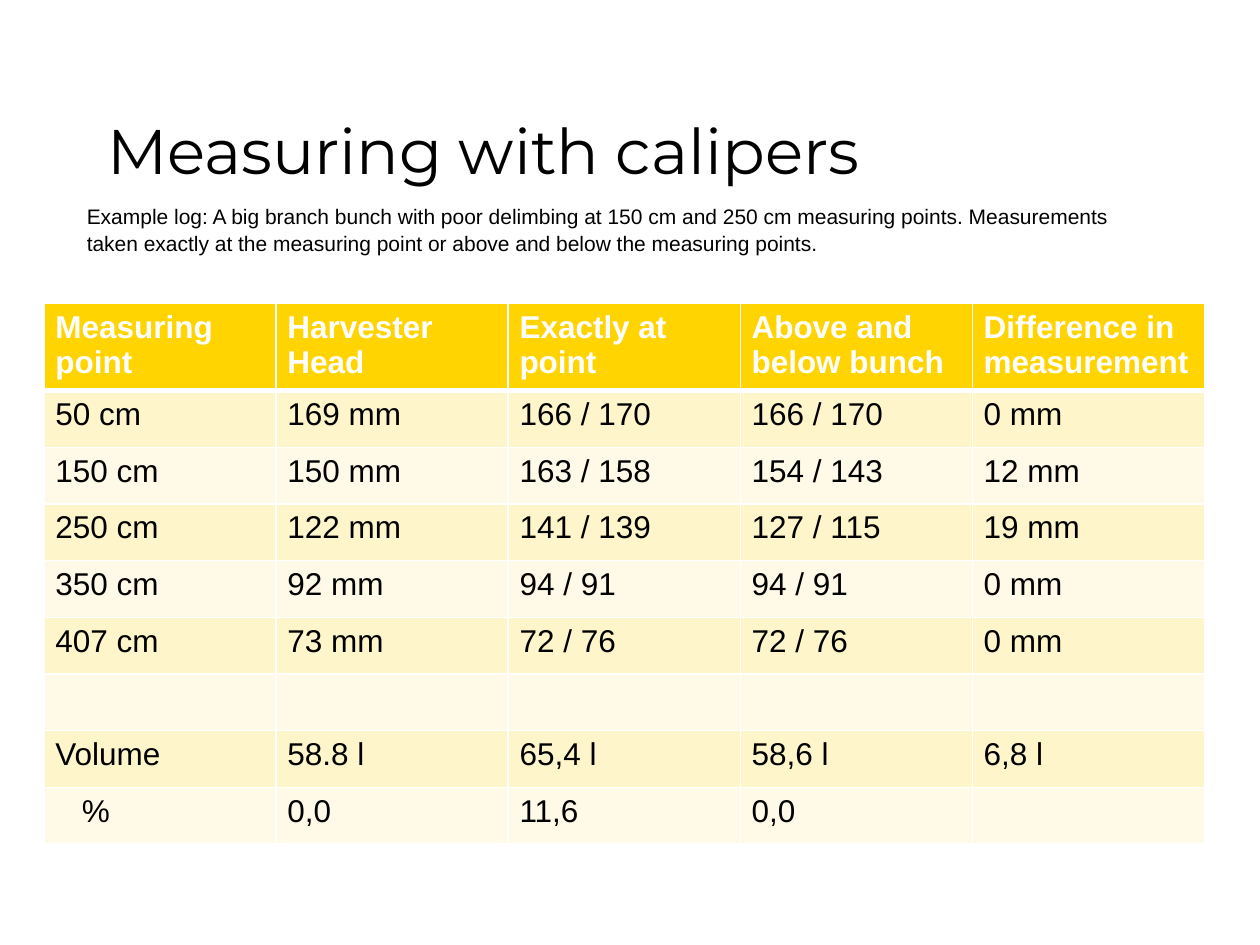
import pptx
import pptx.util
import pptx.dml.color
import pptx.enum.text
import pptx.oxml
import pptx.oxml.ns
from dataclasses import dataclass

Inches = pptx.util.Inches
Pt = pptx.util.Pt
RGB = pptx.dml.color.RGBColor.from_string


@dataclass
class Theme:
    white: str = "FFFFFF"
    black: str = "000000"
    gold: str = "FFD400"
    dark: str = "FFF5CB"
    light: str = "FFFAE7"
    big: int = 36
    mid: int = 18
    small: int = 12
    sans: str = "Arial"
    head: str = "Montserrat"


def style(para, color, **form):
    for key, value in form.items():
        setattr(para.font, key, value)
    para.font.color.rgb = RGB(color)


def border(cell, widths, color):
    props = cell._tc.get_or_add_tcPr()
    for spot, (side, width) in enumerate(widths.items()):
        line = pptx.oxml.parse_xml(
            f'<a:{side} {pptx.oxml.ns.nsdecls("a")} w="{Pt(width)}">'
            f'<a:solidFill><a:srgbClr val="{color}"/></a:solidFill></a:{side}>'
        )
        props.insert(spot, line)


theme = Theme()
deck = pptx.Presentation()
deck.slide_width, deck.slide_height = Inches(10), Inches(7.5)
slide = deck.slides.add_slide(deck.slide_layouts[5])

title = slide.shapes.title
place = {"left": 0.75, "top": 0.58, "width": 8.5, "height": 1.44}
for key, value in place.items():
    setattr(title, key, Inches(value))
frame = title.text_frame
frame.text = "Measuring with calipers"
form = {
    "auto_size": pptx.enum.text.MSO_AUTO_SIZE.NONE,
    "vertical_anchor": pptx.enum.text.MSO_ANCHOR.MIDDLE,
    "margin_bottom": Inches(0.28),
}
for key, value in form.items():
    setattr(frame, key, value)
para = frame.paragraphs[0]
para.alignment = pptx.enum.text.PP_ALIGN.LEFT
style(para, theme.black, size=Pt(theme.big), name=theme.head)

rows = [
    ["Measuring point", "Harvester\nHead", "Exactly at point",
     "Above and below bunch", "Difference in measurement"],
    ["50 cm", "169 mm", "166 / 170", "166 / 170", "0 mm"],
    ["150 cm", "150 mm", "163 / 158", "154 / 143", "12 mm"],
    ["250 cm", "122 mm", "141 / 139", "127 / 115", "19 mm"],
    ["350 cm", "92 mm", "94 / 91", "94 / 91", "0 mm"],
    ["407 cm", "73 mm", "72 / 76", "72 / 76", "0 mm"],
    [""] * 5,
    ["Volume", "58.8 l", "65,4 l", "58,6 l", "6,8 l"],
    ["%", "0,0", "11,6", "0,0", ""],
]
table = slide.shapes.add_table(
    len(rows), len(rows[0]), Inches(0.35), Inches(2.41), Inches(9.21), Inches(4.32)
).table
for r, row in enumerate(rows):
    top = r == 0
    table.rows[r].height = Inches(0.69 if top else 0.45)
    fill = theme.gold if top else theme.dark if r % 2 else theme.light
    ink = theme.white if top else theme.black
    widths = {"lnL": 1, "lnR": 1, "lnT": 3 if r == 1 else 1, "lnB": 3 if top else 1}
    for c, text in enumerate(row):
        cell = table.cell(r, c)
        cell.text = text
        cell.margin_left = cell.margin_right = Inches(0.09)
        cell.fill.solid()
        cell.fill.fore_color.rgb = RGB(fill)
        border(cell, widths, theme.white)
        for para in cell.text_frame.paragraphs:
            style(para, ink, size=Pt(theme.mid), name=theme.sans, bold=top)
table.cell(len(rows) - 1, 0).margin_left = Inches(0.3)

note = slide.shapes.add_textbox(Inches(0.59), Inches(1.55), Inches(8.58), Inches(0.79))
note.text_frame.word_wrap = True
para = note.text_frame.paragraphs[0]
para.text = (
    "Example log: A big branch bunch with poor delimbing at 150 cm and 250 cm "
    "measuring points. Measurements taken exactly at the measuring point or "
    "above and below the measuring points."
)
para.line_spacing = 1.08
style(para, theme.black, size=Pt(theme.small), name=theme.sans)

deck.save("out.pptx")
